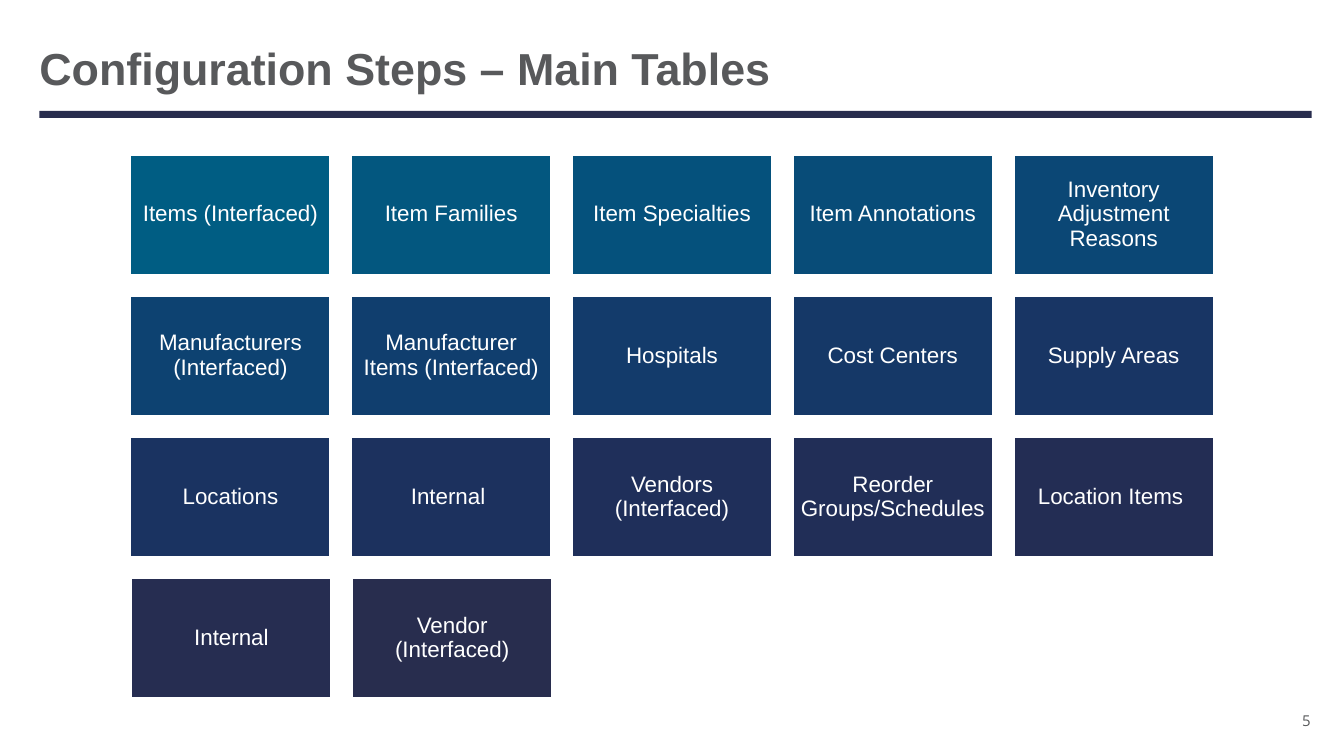
from dataclasses import dataclass

from pptx import Presentation
from pptx.dml.color import RGBColor
from pptx.enum import shapes, text
from pptx.util import Inches, Pt

WHITE = RGBColor(0xFF, 0xFF, 0xFF)
GREY = RGBColor(0x58, 0x59, 0x5B)
NAVY = RGBColor(0x28, 0x2D, 0x4E)

# Grid of tiles, in inches
COLUMNS = 5
GRID_LEFT, GRID_TOP = 1.29, 1.53
COLUMN_STEP, ROW_STEP = 2.19, 1.4
TILE_WIDTH, TILE_HEIGHT = 1.99, 1.2
LAST_ROW, LAST_ROW_SHIFT = 3, 0.01


@dataclass(frozen=True)
class Step:
    label: str
    fill: RGBColor


STEPS = [
    Step("Items (Interfaced)", RGBColor(0x00, 0x5D, 0x83)),
    Step("Item Families", RGBColor(0x03, 0x57, 0x7F)),
    Step("Item Specialties", RGBColor(0x05, 0x51, 0x7C)),
    Step("Item Annotations", RGBColor(0x08, 0x4C, 0x78)),
    Step("Inventory Adjustment Reasons", RGBColor(0x0B, 0x47, 0x75)),
    Step("Manufacturers (Interfaced)", RGBColor(0x0D, 0x42, 0x71)),
    Step("Manufacturer Items (Interfaced)", RGBColor(0x10, 0x3E, 0x6E)),
    Step("Hospitals", RGBColor(0x13, 0x3B, 0x6B)),
    Step("Cost Centers", RGBColor(0x15, 0x38, 0x67)),
    Step("Supply Areas", RGBColor(0x18, 0x35, 0x64)),
    Step("Locations", RGBColor(0x1A, 0x33, 0x61)),
    Step("Internal ", RGBColor(0x1C, 0x31, 0x5E)),
    Step("Vendors (Interfaced)", RGBColor(0x1F, 0x2F, 0x5A)),
    Step("Reorder Groups/Schedules", RGBColor(0x21, 0x2E, 0x57)),
    Step("Location Items ", RGBColor(0x23, 0x2D, 0x54)),
    Step("Internal", RGBColor(0x26, 0x2D, 0x51)),
    Step("Vendor (Interfaced)", NAVY),
]


def write(shape, wording: str, size: float, color: RGBColor, align,
          font: str = "Arial", bold: bool = False, spacing: float = 1.0,
          inset_x: float = 0, inset_y: float = 0) -> None:
    """Fill a shape with one vertically centred paragraph."""
    frame = shape.text_frame
    frame.text = wording
    frame.word_wrap = True
    frame.auto_size = text.MSO_AUTO_SIZE.NONE
    frame.vertical_anchor = text.MSO_ANCHOR.MIDDLE
    frame.margin_left = frame.margin_right = Inches(inset_x)
    frame.margin_top = frame.margin_bottom = Inches(inset_y)
    paragraph = frame.paragraphs[0]
    paragraph.alignment = align
    paragraph.line_spacing = spacing
    face = paragraph.runs[0].font
    face.name, face.size, face.bold = font, Pt(size), bold
    face.color.rgb = color


def add_block(slide, left: float, top: float, width: float, height: float,
              fill: RGBColor):
    """Add a flat rectangle without an outline."""
    block = slide.shapes.add_shape(
        shapes.MSO_SHAPE.RECTANGLE,
        Inches(left), Inches(top), Inches(width), Inches(height))
    block.shadow.inherit = False
    block.fill.solid()
    block.fill.fore_color.rgb = fill
    block.line.fill.background()
    return block


def add_tile(slide, index: int, step: Step) -> None:
    """Add a configuration step at its place in the grid."""
    row, column = divmod(index, COLUMNS)
    shift = LAST_ROW_SHIFT if row == LAST_ROW else 0
    tile = add_block(slide, GRID_LEFT + column * COLUMN_STEP + shift,
                     GRID_TOP + row * ROW_STEP,
                     TILE_WIDTH, TILE_HEIGHT, step.fill)
    tile.line.color.rgb = WHITE
    tile.line.width = Pt(2)
    write(tile, step.label, 16, WHITE, text.PP_ALIGN.CENTER, spacing=0.9,
          inset_x=0.07, inset_y=0.07)


def main() -> None:
    deck = Presentation()
    deck.slide_width, deck.slide_height = Inches(13.33), Inches(7.5)
    slide = deck.slides.add_slide(deck.slide_layouts.get_by_name("Title Only"))

    # Heading and rule
    heading = slide.shapes.title
    heading.left, heading.top = Inches(0.39), Inches(0.41)
    heading.width, heading.height = Inches(12.61), Inches(0.61)
    write(heading, "Configuration Steps – Main Tables", 32, GREY,
          text.PP_ALIGN.LEFT, bold=True, spacing=0.85, inset_y=0.05)
    add_block(slide, 0.39, 1.1, 12.62, 0.07, NAVY)

    # Configuration steps
    for index, step in enumerate(STEPS):
        add_tile(slide, index, step)

    # Page number
    page_number = slide.shapes.add_textbox(
        Inches(12.5), Inches(6.92), Inches(0.5), Inches(0.46))
    write(page_number, "5", 10.7, GREY, text.PP_ALIGN.RIGHT, font="Open Sans")

    deck.save("out.pptx")


if __name__ == "__main__":
    main()
